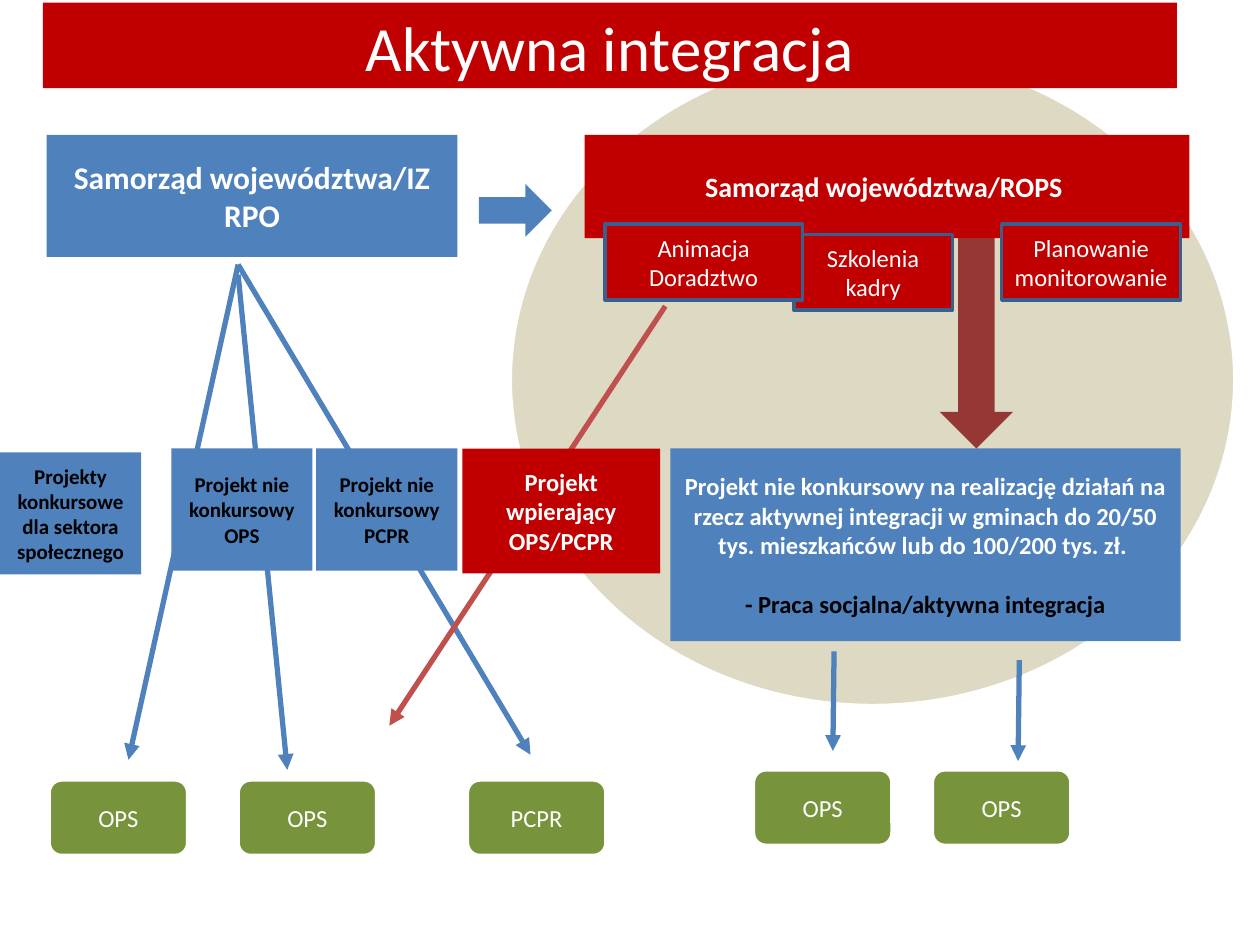
from pptx import Presentation
from pptx.dml.color import RGBColor
from pptx.enum import shapes, text
from pptx.oxml import parse_xml
from pptx.oxml.ns import nsdecls
from pptx.util import Inches, Pt

BLUE, RED, GREEN, BROWN = "4F81BD", "C00000", "77933C", "953735"
WHITE, BLACK, EDGE, SAND, ROSE = "FFFFFF", "000000", "3A5F8C", "DDD9C3", "C0504D"
M = shapes.MSO_SHAPE

prs = Presentation()
prs.slide_width, prs.slide_height = Inches(10), Inches(7.5)
s = prs.slides.add_slide(prs.slide_layouts[6])


def box(kind, at, fill, lines=(), size=14, color=WHITE, bold=False, edge=None):
    """Add a filled shape with one centred paragraph per entry in lines."""
    sp = s.shapes.add_shape(kind, *map(Inches, at))
    sp.shadow.inherit = False
    sp.fill.solid()
    sp.fill.fore_color.rgb = RGBColor.from_string(fill)
    if edge:
        sp.line.color.rgb = RGBColor.from_string(edge)
        sp.line.width = Pt(2)
    else:
        sp.line.fill.background()
    tf = sp.text_frame
    tf.word_wrap = True
    tf.vertical_anchor = text.MSO_ANCHOR.MIDDLE
    for i, line in enumerate(lines):
        p = tf.paragraphs[0] if i == 0 else tf.add_paragraph()
        p.text = line
        p.alignment = text.PP_ALIGN.CENTER
        p.font.name, p.font.size, p.font.bold = "Calibri", Pt(size), bold
        p.font.color.rgb = RGBColor.from_string(color)
    return sp


def arrow(x1, y1, x2, y2, color=BLUE):
    ln = s.shapes.add_connector(shapes.MSO_CONNECTOR.STRAIGHT,
                                *map(Inches, (x1, y1, x2, y2)))
    ln.line.color.rgb = RGBColor.from_string(color)
    ln.line.width = Pt(3)
    ln.line._get_or_add_ln().append(
        parse_xml(f'<a:tailEnd {nsdecls("a")} type="triangle"/>'))
    ln._element.spPr.append(parse_xml(f'<a:effectLst {nsdecls("a")}/>'))


# Background and the two programme columns
box(M.OVAL, (4.05, 0.43, 5.75, 5.17), SAND, edge=WHITE)
box(M.RECTANGLE, (0.37, 1.07, 3.26, 0.97), BLUE,
    ["Samorząd województwa/IZ RPO"], 18, bold=True)
sp = box(M.RECTANGLE, (5.32, 3.56, 4.05, 1.53), BLUE,
         ["Projekt nie konkursowy na realizację działań na rzecz aktywnej integracji "
          "w gminach do 20/50 tys. mieszkańców lub do 100/200 tys. zł. ",
          "- Praca socjalna/aktywna integracja"], bold=True)
p = sp.text_frame.paragraphs[1]
p.space_before = Pt(17)
p.font.color.rgb = RGBColor.from_string(BLACK)
box(M.RIGHT_ARROW, (3.8, 1.46, 0.58, 0.42), BLUE)
box(M.DOWN_ARROW, (7.46, 1.38, 0.58, 2.18), BROWN)

# Arrows down to the centres
for ends in [(1.89, 2.1, 1.02, 6.03), (1.89, 2.18, 2.28, 6.11), (1.89, 2.1, 4.21, 5.99),
             (8.09, 5.24, 8.08, 6.04), (6.62, 5.17, 6.61, 5.96)]:
    arrow(*ends)
arrow(5.28, 2.43, 3.09, 5.76, ROSE)

# Projects
box(M.RECTANGLE, (3.67, 3.56, 1.57, 0.99), RED, ["Projekt wpierający OPS/PCPR"], bold=True)
for x, y, lines in [(0, 3.59, ["Projekty konkursowe dla sektora społecznego"]),
                    (1.36, 3.56, ["Projekt nie konkursowy", "OPS"]),
                    (2.51, 3.56, ["Projekt nie konkursowy", "PCPR"])]:
    box(M.RECTANGLE, (x, y, 1.12, 0.97), BLUE, lines, 12, BLACK, True)

# Regional centre and its tasks
box(M.RECTANGLE, (4.64, 1.07, 4.8, 0.82), RED, ["Samorząd województwa/ROPS "], 16, bold=True)
for x, y, w, lines in [(6.3, 1.86, 1.26, ["Szkolenia kadry"]),
                       (4.8, 1.78, 1.57, ["Animacja", "Doradztwo"]),
                       (7.95, 1.78, 1.42, ["Planowanie monitorowanie"])]:
    box(M.RECTANGLE, (x, y, w, 0.6), RED, lines, edge=EDGE)

# Local centres
for x, y, name in [(0.39, 6.19, "OPS"), (1.89, 6.19, "OPS"), (3.71, 6.19, "PCPR"),
                   (5.98, 6.11, "OPS"), (7.4, 6.11, "OPS")]:
    box(M.ROUNDED_RECTANGLE, (x, y, 1.1, 0.6), GREEN, [name], edge=WHITE)

title = box(M.RECTANGLE, (0.34, 0.02, 9, 0.68), RED, ["Aktywna integracja"], 36)
title.text_frame.vertical_anchor = text.MSO_ANCHOR.TOP

prs.save("out.pptx")
